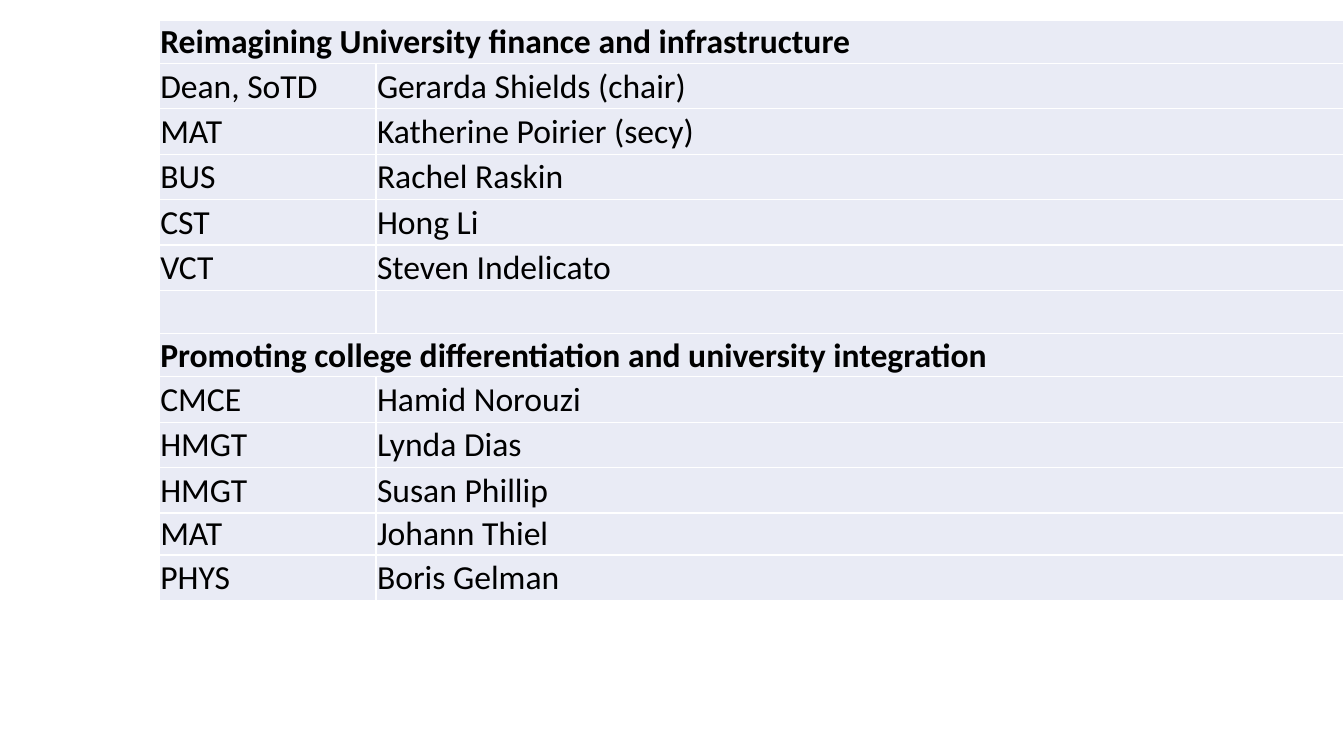
import pptx
import pptx.util
import pptx.oxml
import pptx.oxml.ns
import pptx.dml.color
import pptx.enum.text

INK = pptx.dml.color.RGBColor(0x00, 0x00, 0x00)
PALE = pptx.dml.color.RGBColor(0xE9, 0xEB, 0xF5)
WHITE = pptx.dml.color.RGBColor(0xFF, 0xFF, 0xFF)

TEAMS = [
    ("Reimagining University finance and infrastructure",),
    ("Dean, SoTD", "Gerarda Shields (chair)"),
    ("MAT", "Katherine Poirier (secy)"),
    ("BUS", "Rachel Raskin"),
    ("CST", "Hong Li"),
    ("VCT", "Steven Indelicato"),
    ("", ""),
    ("Promoting college differentiation and university integration",),
    ("CMCE", "Hamid Norouzi"),
    ("HMGT", "Lynda Dias"),
    ("HMGT", "Susan Phillip"),
    ("MAT", "Johann Thiel"),
    ("PHYS", "Boris Gelman"),
]
COLS = [16.13, 72.02]
HEAD, BODY, SHORT = 5.73, 6, 4.67


def write(frame, text, size=24, bold=False, color=INK, face="Calibri"):
    para = frame.paragraphs[0]
    para.font.size = pptx.util.Pt(size)
    if text:
        run = para.add_run()
        run.text = text
        run.font.size = pptx.util.Pt(size)
        run.font.bold = bold
        run.font.name = face
        run.font.color.rgb = color


class Page:
    """Hold the deck, its slide and the table style; lengths are percent of the slide."""

    def __init__(self):
        self.deck = pptx.Presentation()
        self.deck.slide_width = pptx.util.Inches(13.33)
        self.deck.slide_height = pptx.util.Inches(7.5)
        self.slide = self.deck.slides.add_slide(self.deck.slide_layouts[6])
        self.fill = PALE
        self.line = WHITE
        self.inset = pptx.util.Inches(0.01)

    def wide(self, share):
        return round(self.deck.slide_width * share / 100)

    def high(self, share):
        return round(self.deck.slide_height * share / 100)

    def edge(self, cell):
        props = cell._tc.get_or_add_tcPr()
        for side in "LRTB":
            props.append(pptx.oxml.parse_xml(
                f'<a:ln{side} {pptx.oxml.ns.nsdecls("a")} w="{pptx.util.Pt(1)}">'
                f'<a:solidFill><a:srgbClr val="{self.line}"/></a:solidFill>'
                f'</a:ln{side}>'))

    def cell(self, cell, text, bold):
        self.edge(cell)
        cell.fill.solid()
        cell.fill.fore_color.rgb = self.fill
        cell.margin_left = cell.margin_right = cell.margin_top = self.inset
        cell.margin_bottom = 0
        cell.vertical_anchor = pptx.enum.text.MSO_ANCHOR.MIDDLE
        write(cell.text_frame, text, bold=bold)

    def table(self, left, top, cols, rows, data):
        grid = self.slide.shapes.add_table(
            len(rows), len(cols), self.wide(left), self.high(top),
            self.wide(sum(cols)), self.high(sum(rows))).table
        grid.first_row = grid.horz_banding = False
        for col, share in zip(grid.columns, cols):
            col.width = self.wide(share)
        for r, (share, texts) in enumerate(zip(rows, data)):
            grid.rows[r].height = self.high(share)
            head = len(texts) == 1
            if head:
                grid.cell(r, 0).merge(grid.cell(r, len(cols) - 1))
            for c in range(len(cols)):
                text = texts[c] if c < len(texts) else ""
                self.cell(grid.cell(r, c), text, head)


def height(team):
    if len(team) == 1 or not any(team):
        return HEAD
    return SHORT if team[1] == "Johann Thiel" else BODY


def main():
    page = Page()
    page.table(11.85, 2.67, COLS, [height(team) for team in TEAMS], TEAMS)
    page.deck.save("out.pptx")


if __name__ == "__main__":
    main()
